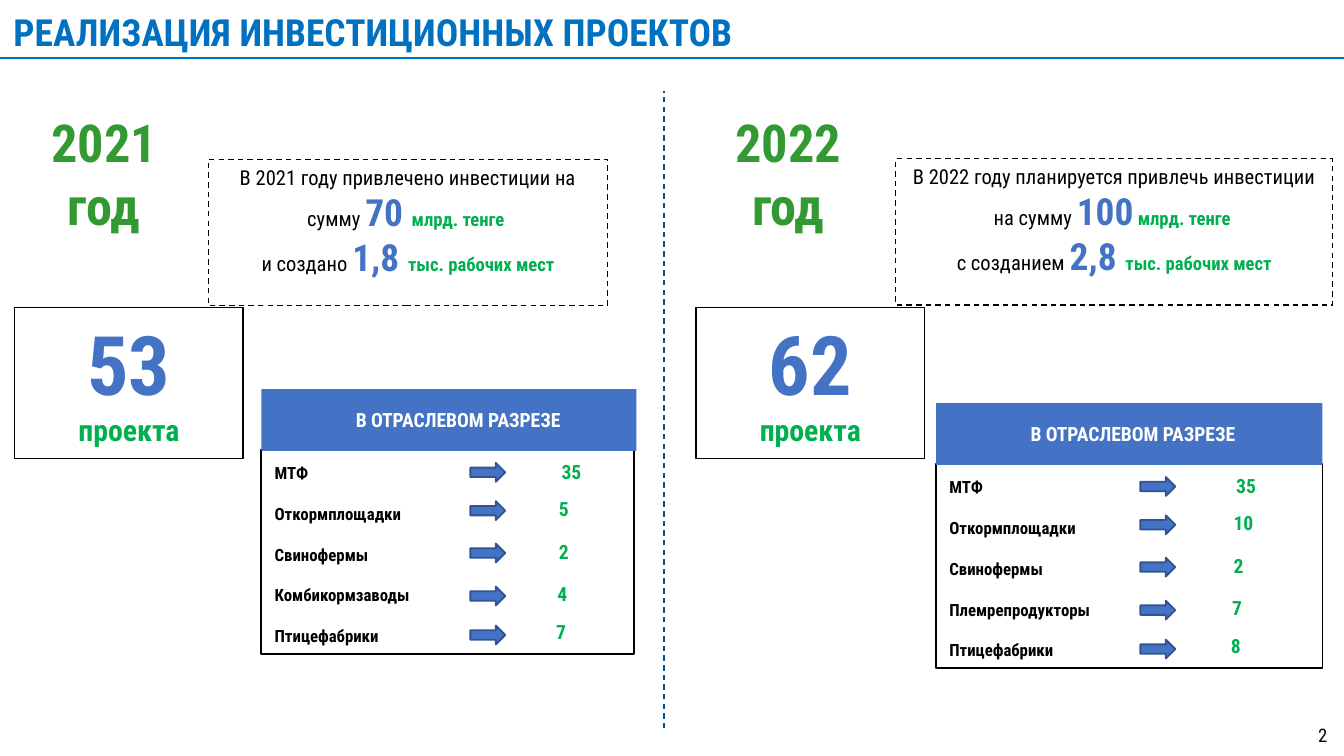
"""Build the slide on investment projects, with one panel for each year."""
from lxml import etree
from pptx import Presentation
from pptx.dml.color import RGBColor
from pptx.enum.dml import MSO_LINE
from pptx.enum.shapes import MSO_CONNECTOR, MSO_SHAPE
from pptx.enum.text import MSO_ANCHOR, MSO_AUTO_SIZE, PP_ALIGN
from pptx.oxml.ns import qn
from pptx.util import Inches, Pt

RECT, ARROW = MSO_SHAPE.RECTANGLE, MSO_SHAPE.RIGHT_ARROW
STRAIGHT, DASH = MSO_CONNECTOR.STRAIGHT, MSO_LINE.DASH
LEFT, CENTER = PP_ALIGN.LEFT, PP_ALIGN.CENTER
TOP, MIDDLE = MSO_ANCHOR.TOP, MSO_ANCHOR.MIDDLE
FIXED = MSO_AUTO_SIZE.NONE

BLACK = RGBColor(0x00, 0x00, 0x00)
WHITE = RGBColor(0xFF, 0xFF, 0xFF)
BLUE = RGBColor(0x44, 0x72, 0xC4)
EDGE = RGBColor(0x32, 0x55, 0x91)
SKY = RGBColor(0x00, 0x70, 0xC0)
NAVY = RGBColor(0x00, 0x51, 0x8E)
GREEN = RGBColor(0x00, 0xB0, 0x50)
LEAF = RGBColor(0x33, 0x99, 0x33)

FACE = "Roboto Condensed"
FONTS = {
    "title": (20, True, SKY), "year": (28, True, LEAF),
    "count": (44, True, BLUE), "noun": (16, True, GREEN),
    "body": (11, False, BLACK), "sum": (20, True, BLUE),
    "unit": (10, True, GREEN), "head": (10.5, True, WHITE),
    "label": (9, True, BLACK), "value": (10.5, True, GREEN),
    "page": (10, False, BLACK),
}

TITLE = "РЕАЛИЗАЦИЯ ИНВЕСТИЦИОННЫХ ПРОЕКТОВ"
HEAD = "В ОТРАСЛЕВОМ РАЗРЕЗЕ"
PAGE = "2"
PANELS = [
    {
        "year": "2021", "count": "53",
        "goal": [("В 2021 году привлечено инвестиции на сумму ", "70 ", "млрд. тенге "),
                 ("и создано ", "1,8 ", "тыс. рабочих мест")],
        "rows": [("МТФ", "35"), ("Откормплощадки", "5"), ("Свинофермы", "2"),
                 ("Комбикормзаводы", "4"), ("Птицефабрики", "7")],
        "left": {"year": 1.7, "count": 1.1, "list": 19.45, "arrow": 35, "value": 40.8},
        "note": (15.5, 11.85, 29.7, 10.9), "top": 28.95, "frame": 27.7, "band": 27.9,
    },
    {
        "year": "2022", "count": "62",
        "goal": [("В 2022 году планируется привлечь инвестиции на сумму ", "100", " млрд. тенге "),
                 ("с созданием ", "2,8 ", "тыс. рабочих мест")],
        "rows": [("МТФ", "35"), ("Откормплощадки", "10"), ("Свинофермы", "2"),
                 ("Племрепродукторы", "7"), ("Птицефабрики", "8")],
        "left": {"year": 52.6, "count": 51.8, "list": 69.65, "arrow": 84.85, "value": 91},
        "note": (66.65, 11.8, 32.5, 10.9), "top": 30, "frame": 28.75, "band": 28.75,
    },
]
STEPS = [0, 2.85, 6, 9.2, 12.1]
SLANT = [0, 0.2, 0.2, 0.3, 0.4]

COLS, ROWS = 100, 56.25
WIDE = Inches(10)
HIGH = WIDE * 9 // 16
UNIT = WIDE / COLS

deck = Presentation()
deck.slide_width, deck.slide_height = WIDE, HIGH
slide = deck.slides.add_slide(deck.slide_layouts[5])
shapes = slide.shapes


def grid(*cells):
    return [round(cell * UNIT) for cell in cells]


def apply(item, form):
    for name, value in form.items():
        setattr(item, name, value)


def write(shape, lines, align=LEFT, pad=(1, 0.5, 1, 0.5), anchor=TOP, wrap=True, **form):
    frame = shape.text_frame
    names = ("margin_left", "margin_top", "margin_right", "margin_bottom")
    apply(frame, dict(zip(names, grid(*pad))))
    apply(frame, {"auto_size": FIXED, "word_wrap": wrap, "vertical_anchor": anchor})
    for num, line in enumerate(lines):
        para = frame.add_paragraph() if num else frame.paragraphs[0]
        apply(para, {"alignment": align, **form})
        for text, kind in line:
            run = para.add_run()
            run.text = text
            size, bold, color = FONTS[kind]
            apply(run.font, {"name": FACE, "size": Pt(size), "bold": bold})
            run.font.color.rgb = color


def label(box, lines, **form):
    write(shapes.add_textbox(*grid(*box)), lines, **form)


def draw(kind, box, fill=None, edge=None, width=1, dash=None):
    shape = shapes.add_shape(kind, *grid(*box))
    shape.shadow.inherit = False
    for part, color in ((shape.fill, fill), (shape.line.fill, edge)):
        if color is None:
            part.background()
        else:
            part.solid()
            part.fore_color.rgb = color
    if edge is not None:
        apply(shape.line, {"width": Pt(width), "dash_style": dash})
    return shape


def rule(ends, color, width, dash=None):
    line = shapes.add_connector(STRAIGHT, *grid(*ends))
    line.line.color.rgb = color
    apply(line.line, {"width": Pt(width), "dash_style": dash})
    etree.SubElement(line._element.spPr, qn("a:effectLst"))


def panel(data):
    left, top = data["left"], data["top"]
    box = draw(RECT, (left["count"], 22.9, 17, 11.2), edge=BLACK, width=0.75)
    write(box, [[(data["count"], "count")], [("проекта", "noun")]],
          CENTER, (0.7, 0.4, 0.7, 0.8), MIDDLE)
    note = draw(RECT, data["note"], edge=BLACK, width=0.75, dash=DASH)
    goal = [list(zip(line, ("body", "sum", "unit"))) for line in data["goal"]]
    write(note, goal, CENTER, (0.7, 0.4, 0.7, 0.4))
    label((left["year"], 7.7, 12.1, 10.4),
          [[(data["year"], "year")], [("год", "year")]], align=CENTER)

    start = left["list"]
    label((start, top + 5, 19.1, 16.2),
          [[(name, "label")] for name, _ in data["rows"]], space_after=Pt(11))
    draw(RECT, (start, top + 4.5, data["frame"], 15.2), edge=BLACK)
    draw(RECT, (start, top, data["band"], 4.6), fill=BLUE)
    label((start + 1.65, top + 1.3, 26, 1.9), [[(HEAD, "head")]],
          align=CENTER, pad=(0, 0.1, 0, 0), anchor=MIDDLE)
    for (_, value), step, slant in zip(data["rows"], STEPS, SLANT):
        draw(ARROW, (left["arrow"], top + 5.5 + step, 2.6, 1.4), BLUE, EDGE)
        label((left["value"] - slant, top + 4.8 + step - slant / 2, 5, 2.8),
              [[(value, "value")]])


title = shapes.title
apply(title, dict(zip(("left", "top", "width", "height"), grid(0, 0.6, COLS, 3.5))))
write(title, [[(TITLE, "title")]], anchor=MIDDLE)
rule((0, 4.3, COLS, 4.3), SKY, 1)
for data in PANELS:
    panel(data)
rule((49.4, 54.2, 49.4, 6.8), NAVY, 0.75, DASH)
label((97.1, ROWS - 2.85, 2.7, 2.7), [[(PAGE, "page")]], wrap=False)
deck.save("out.pptx")
